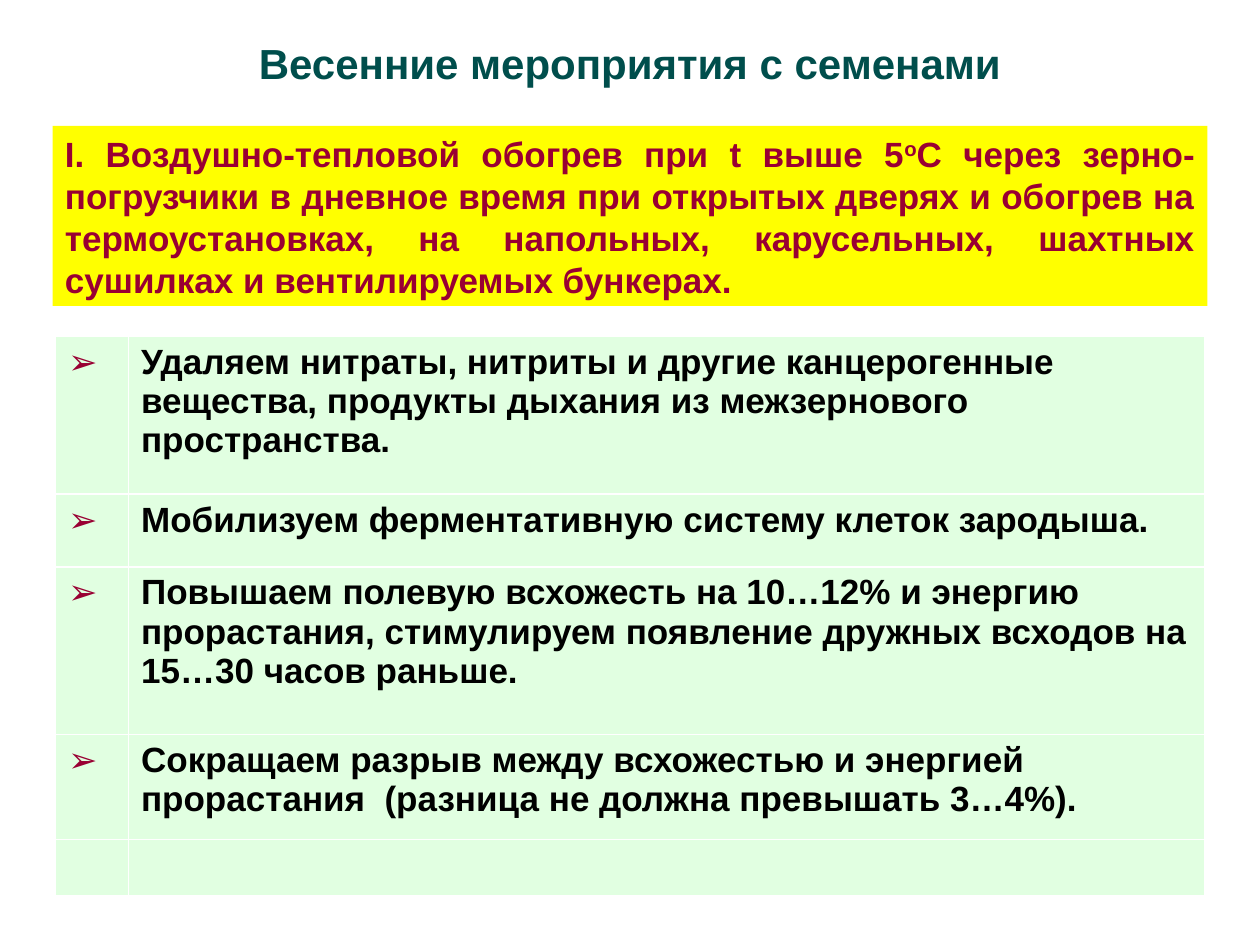
from dataclasses import dataclass

from pptx import Presentation
from pptx.dml.color import RGBColor
from pptx.enum.shapes import MSO_SHAPE as Shape
from pptx.enum.text import MSO_ANCHOR as Anchor, PP_ALIGN as Align
from pptx.slide import Slide
from pptx.util import Cm, Pt

WHITE = RGBColor(0xFF, 0xFF, 0xFF)
YELLOW = RGBColor(0xFF, 0xFF, 0x00)
MINT = RGBColor(0xE1, 0xFF, 0xE1)
TEAL = RGBColor(0x00, 0x4E, 0x4C)
CRIMSON = RGBColor(0x99, 0x00, 0x33)
BLACK = RGBColor(0x00, 0x00, 0x00)

MEASURE = [
    ("I. Воздушно-тепловой обогрев при t выше 5", 0),
    ("о", 30),
    (
        "С через зерно-погрузчики в дневное время при открытых дверях и обогрев на "
        "термоустановках, на напольных, карусельных, шахтных сушилках и "
        "вентилируемых бункерах.",
        0,
    ),
]
EFFECTS = [
    (
        "Удаляем нитраты, нитриты и другие канцерогенные вещества, "
        "продукты дыхания из межзернового пространства.",
        3.18,
    ),
    ("Мобилизуем ферментативную систему клеток зародыша.", 1.47),
    (
        "Повышаем полевую всхожесть на 10…12% и энергию прорастания, "
        "стимулируем появление дружных всходов на 15…30 часов раньше.",
        3.38,
    ),
    (
        "Сокращаем разрыв между всхожестью и энергией прорастания  "
        "(разница не должна превышать 3…4%).",
        2.11,
    ),
    ("", 1.14),
]


def write(paragraph, text, *, font, size, color, bold=True, raised=0):
    run = paragraph.add_run()
    run.text = text
    run.font.name = font
    run.font.size = Pt(size)
    run.font.bold = bold
    run.font.color.rgb = color
    if raised:
        run.font._element.set("baseline", str(raised * 1000))


@dataclass
class Composer:
    slide: Slide
    font: str = "Arial"
    size: int = 20

    def banner(self, runs, top, height, *, fill, color, align, size=None):
        band = self.slide.shapes.add_shape(
            Shape.RECTANGLE, Cm(1.06), Cm(top), Cm(23.28), Cm(height)
        )
        band.shadow.inherit = False
        band.fill.solid()
        band.fill.fore_color.rgb = fill
        band.line.fill.background()
        frame = band.text_frame
        frame.word_wrap = True
        frame.vertical_anchor = Anchor.TOP
        paragraph = frame.paragraphs[0]
        paragraph.alignment = align
        for text, raised in runs:
            write(paragraph, text, font=self.font, size=size or self.size,
                  color=color, raised=raised)

    def marked_table(self, entries, left, top, widths, *, marker):
        height = sum(row_height for _, row_height in entries)
        table = self.slide.shapes.add_table(
            len(entries), len(widths), Cm(left), Cm(top), Cm(sum(widths)), Cm(height)
        ).table
        table.first_row = False
        table.horz_banding = False
        for column, width in zip(table.columns, widths):
            column.width = Cm(width)
        for row, (text, row_height) in zip(table.rows, entries):
            row.height = Cm(row_height)
            contents = ((marker if text else "", CRIMSON), (text, BLACK))
            for cell, (content, color) in zip(row.cells, contents):
                cell.fill.solid()
                cell.fill.fore_color.rgb = MINT
                if content:
                    write(cell.text_frame.paragraphs[0], content,
                          font=self.font, size=self.size, color=color)


def main():
    deck = Presentation()
    deck.slide_width, deck.slide_height = Cm(25.4), Cm(19.05)
    composer = Composer(deck.slides.add_slide(deck.slide_layouts[6]))
    composer.banner(MEASURE, 2.54, 3.63, fill=YELLOW, color=CRIMSON,
                    align=Align.JUSTIFY)
    composer.marked_table(EFFECTS, 1.12, 6.78, (1.47, 21.69), marker="➢")
    composer.banner([("Весенние мероприятия с семенами", 0)], 0.64, 1.27,
                    fill=WHITE, color=TEAL, align=Align.CENTER, size=24)
    deck.save("out.pptx")


if __name__ == "__main__":
    main()
